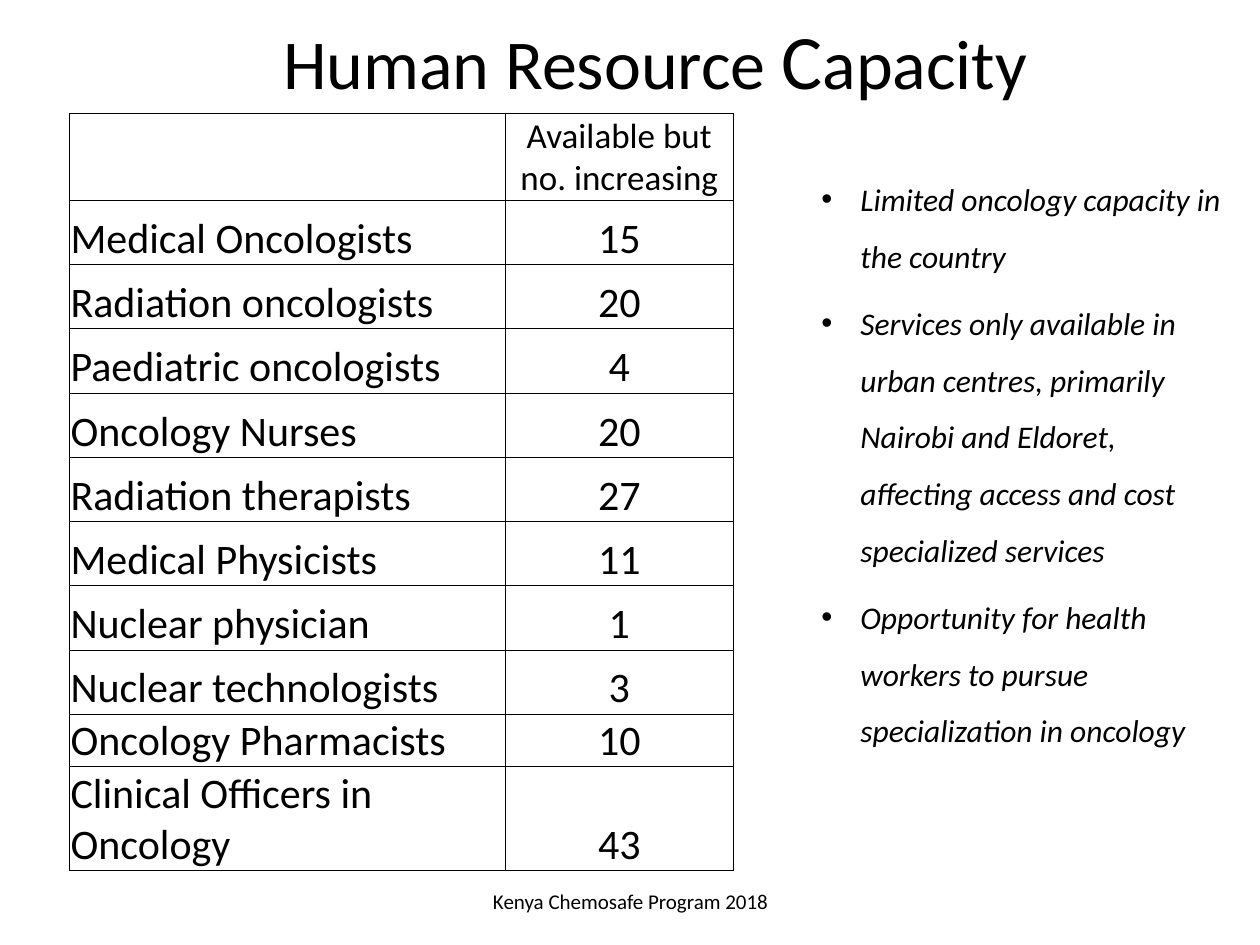
from lxml.etree import SubElement
from pptx import Presentation
from pptx.dml.color import RGBColor
from pptx.enum.text import MSO_ANCHOR, PP_ALIGN
from pptx.oxml.ns import qn
from pptx.util import Inches, Pt

HUES = {"ink": "000000", "line": "000000"}
FACE = "Calibri"
STAFF = [
    ("", "Available but no. increasing"),
    ("Medical Oncologists", "15"),
    ("Radiation oncologists", "20"),
    ("Paediatric oncologists", "4"),
    ("Oncology Nurses", "20"),
    ("Radiation therapists", "27"),
    ("Medical Physicists", "11"),
    ("Nuclear physician", "1"),
    ("Nuclear technologists", "3"),
    ("Oncology Pharmacists", "10"),
    ("Clinical Officers in Oncology", "43"),
]
POINTS = [
    "Limited oncology capacity in the country",
    "Services only available in urban centres, primarily Nairobi and Eldoret, "
    "affecting access and cost specialized services",
    "Opportunity for health workers to pursue specialization in oncology",
]


def style(font, size, italic=False):
    """Set the face, size and colour of a font."""
    font.name, font.size = FACE, Pt(size)
    font.bold, font.italic = False, italic
    font.color.rgb = RGBColor.from_string(HUES["ink"])


def add_title(slide, box):
    """Place the title with its larger capital C."""
    title = slide.shapes.title
    title.left, title.top, title.width, title.height = map(Inches, box)
    title.text_frame.vertical_anchor = MSO_ANCHOR.MIDDLE
    para = title.text_frame.paragraphs[0]
    para.alignment = PP_ALIGN.CENTER
    for text, size in (("Human Resource ", 40), ("C", 44), ("apacity", 40)):
        run = para.add_run()
        run.text = text
        style(run.font, size)


def add_edges(cell):
    """Draw a thin line on all four sides of a cell."""
    props = cell._tc.get_or_add_tcPr()
    for side in ("lnL", "lnR", "lnT", "lnB"):
        line = SubElement(props, qn(f"a:{side}"), w=str(Pt(0.5)))
        fill = SubElement(line, qn("a:solidFill"))
        SubElement(fill, qn("a:srgbClr"), val=HUES["line"])


def add_staff(slide, box):
    """Build the table of staff numbers."""
    frame = slide.shapes.add_table(len(STAFF), 2, *map(Inches, box))
    table = frame.table
    table.first_row = table.horz_banding = False
    for col, width in zip(table.columns, (3.46, 1.81)):
        col.width = Inches(width)
    for row, (line, texts) in enumerate(zip(table.rows, STAFF)):
        line.height = Inches(0.51 if row < 9 else 0.38)
        for col, text in enumerate(texts):
            cell = table.cell(row, col)
            add_edges(cell)
            cell.fill.background()
            cell.vertical_anchor = MSO_ANCHOR.BOTTOM
            cell.margin_left = cell.margin_right = Inches(0.01)
            cell.margin_top, cell.margin_bottom = Inches(0.01), 0
            cell.text_frame.text = text
            para = cell.text_frame.paragraphs[0]
            para.alignment = PP_ALIGN.CENTER if col else PP_ALIGN.LEFT
            style(para.font, 24 if row else 20)
            for run in para.runs:
                style(run.font, 24 if row else 20)


def add_points(slide, box):
    """Write the bulleted remarks."""
    frame = slide.shapes.add_textbox(*map(Inches, box)).text_frame
    frame.word_wrap = True
    frame.text = "\n".join(POINTS)
    for para in frame.paragraphs:
        props = para._p.get_or_add_pPr()
        props.set("marL", str(Inches(0.31)))
        props.set("indent", str(-Inches(0.31)))
        SubElement(props, qn("a:buFont"), typeface="Arial")
        SubElement(props, qn("a:buChar"), char="•")
        para.line_spacing = 1.5
        para.space_after = Pt(6)
        style(para.runs[0].font, 18, italic=True)


def add_footer(slide, box):
    """Write the centred footer line."""
    frame = slide.shapes.add_textbox(*map(Inches, box)).text_frame
    frame.word_wrap = True
    frame.vertical_anchor = MSO_ANCHOR.MIDDLE
    frame.text = "Kenya Chemosafe Program 2018"
    para = frame.paragraphs[0]
    para.alignment = PP_ALIGN.CENTER
    style(para.runs[0].font, 12)


def main():
    """Build the slide and save it."""
    deck = Presentation()
    deck.slide_width, deck.slide_height = Inches(10), Inches(7.5)
    slide = deck.slides.add_slide(deck.slide_layouts[5])
    add_title(slide, (0.95, 0.03, 8.5, 0.87))
    add_staff(slide, (0.55, 0.9, 5.27, 5.35))
    add_footer(slide, (3.42, 6.95, 3.17, 0.4))
    add_points(slide, (6.42, 1.23, 3.39, 4.81))
    deck.save("out.pptx")


if __name__ == "__main__":
    main()
